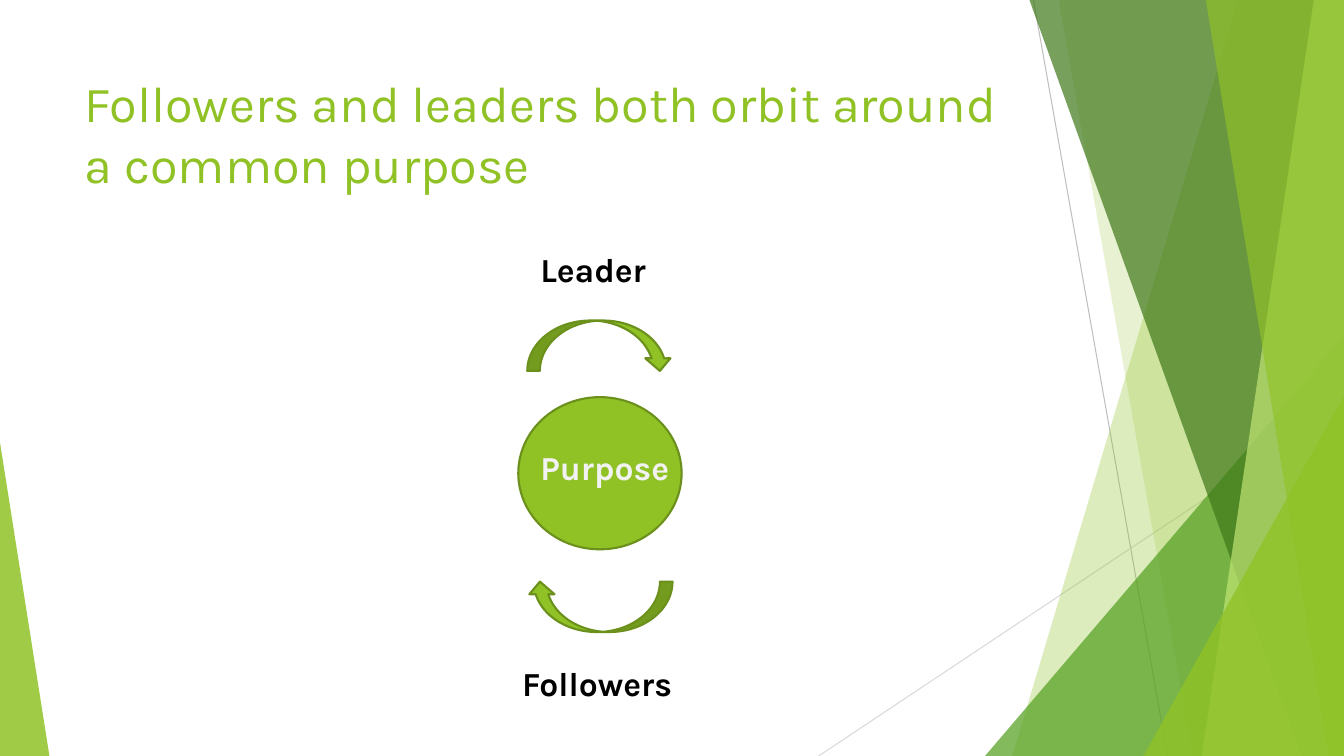
from dataclasses import dataclass

from lxml.etree import SubElement
from pptx import Presentation
from pptx.dml.color import RGBColor
from pptx.enum.shapes import MSO_CONNECTOR, MSO_SHAPE
from pptx.enum.text import MSO_ANCHOR, MSO_AUTO_SIZE, PP_ALIGN
from pptx.oxml.ns import qn
from pptx.util import Pt

EMU_PER_PX = 9144
WIDTH, HEIGHT = 1333, 750


@dataclass(frozen=True)
class Theme:
    font: str = "Karla"
    title_size: int = 36
    label_size: int = 24
    outline_width: float = 1.5
    hairline_width: float = 0.75
    lime: str = "90C226"
    lime_dark: str = "6B901C"
    lime_pale: str = "C0E474"
    green: str = "54A021"
    forest: str = "3F7819"
    grey: str = "BFBFBF"
    grey_pale: str = "D9D9D9"
    black: str = "000000"
    off_white: str = "F2F2F2"


def px(*lengths):
    return [length * EMU_PER_PX for length in lengths]


class SlideBuilder:
    def __init__(self, slide, theme):
        self.slide = slide
        self.theme = theme

    def style_text(self, frame, size, color, bold):
        frame.word_wrap = True
        paragraph = frame.paragraphs[0]
        paragraph.alignment = PP_ALIGN.LEFT
        font = paragraph.font
        font.name = self.theme.font
        font.size = Pt(size)
        font.bold = bold
        font.color.rgb = RGBColor.from_string(color)

    def title(self, text, left, top, width, height):
        title = self.slide.shapes.title
        title.left, title.top, title.width, title.height = px(left, top, width, height)
        frame = title.text_frame
        frame.text = text
        frame.auto_size = MSO_AUTO_SIZE.NONE
        frame.vertical_anchor = MSO_ANCHOR.TOP
        self.style_text(frame, self.theme.title_size, self.theme.lime, False)

    def label(self, text, left, top, width, color):
        box = self.slide.shapes.add_textbox(*px(left, top, width, 50))
        frame = box.text_frame
        frame.text = text
        frame.auto_size = MSO_AUTO_SIZE.SHAPE_TO_FIT_TEXT
        self.style_text(frame, self.theme.label_size, color, True)

    def hairline(self, start, end, color):
        line = self.slide.shapes.add_connector(MSO_CONNECTOR.STRAIGHT, *px(*start, *end))
        line.line.color.rgb = RGBColor.from_string(color)
        line.line.width = Pt(self.theme.hairline_width)
        SubElement(line.element.spPr, qn("a:effectLst"))

    def tint(self, shape, color, opacity):
        shape.shadow.inherit = False
        shape.line.fill.background()
        shape.fill.solid()
        shape.fill.fore_color.rgb = RGBColor.from_string(color)
        swatch = shape.element.spPr.find(qn("a:solidFill"))[0]
        SubElement(swatch, qn("a:alpha"), val=str(opacity * 1000))

    def band(self, top_left, bottom_left, color, opacity):
        builder = self.slide.shapes.build_freeform(top_left, 0, scale=EMU_PER_PX)
        builder.add_line_segments([(WIDTH, 0), (WIDTH, HEIGHT), (bottom_left, HEIGHT)])
        self.tint(builder.convert_to_shape(), color, opacity)

    def corner(self, left, top, width, apex, color, opacity):
        triangle = self.slide.shapes.add_shape(
            MSO_SHAPE.ISOSCELES_TRIANGLE, *px(left, top, width, HEIGHT - top))
        triangle.adjustments[0] = apex
        self.tint(triangle, color, opacity)

    def outlined(self, kind, left, top, width, height, rotation=0):
        shape = self.slide.shapes.add_shape(kind, *px(left, top, width, height))
        shape.rotation = rotation
        shape.shadow.inherit = False
        shape.fill.solid()
        shape.fill.fore_color.rgb = RGBColor.from_string(self.theme.lime)
        shape.line.color.rgb = RGBColor.from_string(self.theme.lime_dark)
        shape.line.width = Pt(self.theme.outline_width)


def draw_backdrop(page, theme):
    page.hairline((1025, 0), (1158, HEIGHT), theme.grey)
    page.hairline((WIDTH, 403), (812, HEIGHT), theme.grey_pale)
    page.band(1228, 1004, theme.lime, 30)
    page.band(1050, 1183, theme.lime, 20)
    page.corner(977, 333, 356, 1, theme.green, 72)
    page.band(1021, 1291, theme.forest, 70)
    page.band(1303, 1192, theme.lime_pale, 70)
    page.band(1196, 1318, theme.lime, 65)
    page.corner(1134, 393, 199, 1, theme.lime, 80)
    page.corner(0, 439, 49, 0, theme.lime, 85)


def draw_orbit(page, theme):
    page.outlined(MSO_SHAPE.OVAL, 514, 394, 162, 151)
    page.label("Leader", 526, 242, 162, theme.black)
    page.label("Followers", 508, 653, 180, theme.black)
    page.label("Purpose", 526, 438, 162, theme.off_white)
    for top, rotation in ((318, 0), (577, 180)):
        page.outlined(MSO_SHAPE.CURVED_DOWN_ARROW, 523, top, 144, 50, rotation)


def main():
    deck = Presentation()
    deck.slide_width, deck.slide_height = px(WIDTH, HEIGHT)
    theme = Theme()
    page = SlideBuilder(deck.slides.add_slide(deck.slide_layouts[5]), theme)
    draw_backdrop(page, theme)
    page.title("Followers and leaders both orbit around a common purpose", 74, 67, 940, 144)
    draw_orbit(page, theme)
    deck.save("out.pptx")


if __name__ == "__main__":
    main()
